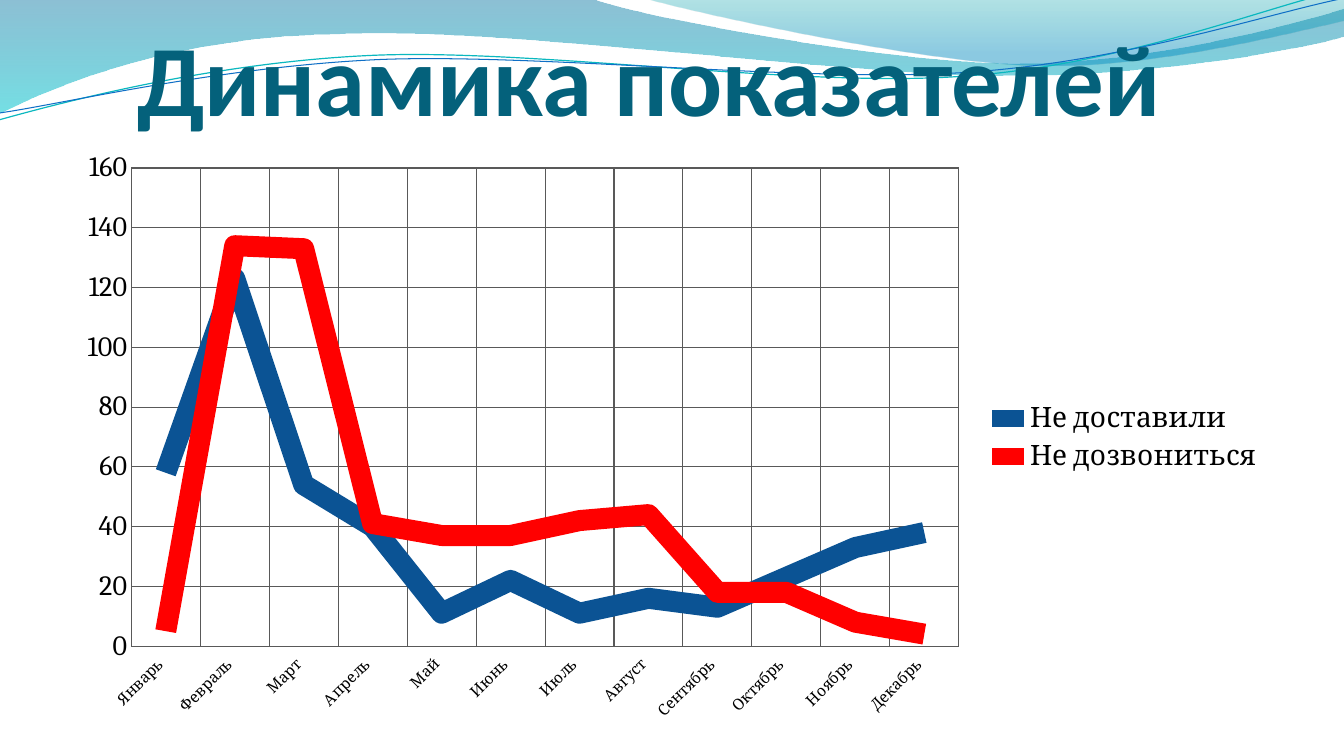
import math

from lxml import etree
from pptx import Presentation
from pptx import util as u
from pptx.chart.data import CategoryChartData
from pptx.dml.color import RGBColor
from pptx.enum import chart as ch, text
from pptx.oxml import ns

TEAL = RGBColor(0x04, 0x61, 0x7B)
BLUE = RGBColor(0x0F, 0x6F, 0xC6)
DARK_BLUE = RGBColor(0x0B, 0x53, 0x94)
CYAN = RGBColor(0x0A, 0xB8, 0xBF)
RED = RGBColor(0xFF, 0x00, 0x00)
BLACK = RGBColor(0x00, 0x00, 0x00)
GRID = RGBColor(0x59, 0x59, 0x59)
WAVE_TOP = RGBColor(0x00, 0x74, 0xA1)
WAVE_BOTTOM = RGBColor(0x00, 0xC6, 0xCF)
CREST_TOP = RGBColor(0x00, 0xA1, 0xA9)
CREST_BOTTOM = RGBColor(0x00, 0x8B, 0xBF)

MONTHS = ["Январь", "Февраль", "Март", "Апрель", "Май", "Июнь",
          "Июль", "Август", "Сентябрь", "Октябрь", "Ноябрь", "Декабрь"]
SERIES = [
    ("Не доставили", [58, 123, 54, 40, 11, 22, 11, 16, 13, 23, 33, 38], DARK_BLUE),
    ("Не дозвониться", [5, 134, 133, 41, 37, 37, 42, 44, 18, 18, 8, 4], RED),
]

WAVE = [(0, 0), (5.87, -0.01),
        (6.34, 0.17, 8.85, 0.63, 10.11, 0.63),
        (11.38, 0.63, 12.78, 0.26, 13.33, 0.09),
        (13.35, 0.36),
        (13.11, 0.44, 11.6, 0.76, 9.94, 0.75),
        (8.29, 0.75, 5.09, 0.28, 3.43, 0.34),
        (1.72, 0.36, 0.61, 0.83, -0.01, 1.13)]
CREST = [(6.39, -0.01),
         (6.79, 0.11, 9.09, 0.62, 10.25, 0.65),
         (11.41, 0.69, 12.82, 0.32, 13.33, 0.21),
         (13.33, 0)]
CYAN_LINE = [(-0.01, 1.19),
             (0.64, 1.01, 2.11, 0.62, 3.69, 0.55),
             (5.27, 0.48, 7.9, 0.87, 9.5, 0.76),
             (11.1, 0.66, 12.52, 0.08, 13.31, -0.1)]
BLUE_LINE = [(0, 1.12),
             (0.63, 1.03, 2.18, 0.66, 3.78, 0.59),
             (5.37, 0.53, 7.96, 0.82, 9.55, 0.72),
             (11.15, 0.62, 12.55, 0.14, 13.34, -0.02)]
TILT = -2.7


def turn(segments, degrees, cx=6.66, cy=0.57):
    cos, sin = math.cos(math.radians(degrees)), math.sin(math.radians(degrees))
    turned = []
    for seg in segments:
        points = []
        for x, y in zip(seg[::2], seg[1::2]):
            dx, dy = x - cx, y - cy
            points += [cx + dx * cos - dy * sin, cy + dx * sin + dy * cos]
        turned.append(tuple(points))
    return turned


def set_font(font, size, name="Cambria", color=BLACK, bold=False):
    font.size = u.Pt(size)
    font.name = name
    font.bold = bold
    font.color.rgb = color


def write(p, words, align=text.PP_ALIGN.LEFT, **fmt):
    p.alignment = align
    r = p.add_run()
    r.text = words
    set_font(r.font, **fmt)


class SlideBuilder:
    heading = {"size": 72, "name": "Calibri", "color": TEAL, "bold": True}

    def __init__(self, prs):
        self.s = prs.slides.add_slide(prs.slide_layouts[5])

    def outline(self, segments, close):
        segments = [[u.Inches(v) for v in seg] for seg in segments]
        ends = [seg[-2:] for seg in segments]
        builder = self.s.shapes.build_freeform(*ends[0])
        builder.add_line_segments(ends[1:], close=close)
        sp = builder.convert_to_shape()
        sp.shadow.inherit = False
        sides = list(sp._element.iter(ns.qn("a:lnTo")))
        for side, seg in zip(sides, segments[1:]):
            if len(seg) == 6:
                self.bend(side, seg, sp.left, sp.top)
        return sp

    def bend(self, side, seg, left, top):
        bezier = etree.Element(ns.qn("a:cubicBezTo"))
        for x, y in zip(seg[::2], seg[1::2]):
            pt = etree.SubElement(bezier, ns.qn("a:pt"))
            pt.set("x", str(x - left))
            pt.set("y", str(y - top))
        side.getparent().replace(side, bezier)

    def wave(self, segments, stops):
        sp = self.outline(segments, True)
        sp.line.fill.background()
        sp.fill.gradient()
        sp.fill.gradient_angle = 270
        for stop, (position, color, _) in zip(sp.fill.gradient_stops, stops):
            stop.position = position
            stop.color.rgb = color
        colors = sp._element.spPr.iter(ns.qn("a:srgbClr"))
        for clr, (_, _, opacity) in zip(colors, stops):
            etree.SubElement(clr, ns.qn("a:alpha")).set("val", str(opacity * 1000))

    def curve(self, segments, color, width):
        sp = self.outline(turn(segments, -TILT), False)
        sp.rotation = TILT
        sp.fill.background()
        sp.line.color.rgb = color
        sp.line.width = u.Pt(width)

    def title(self, words):
        sp = self.s.shapes.title
        sp._element.getparent().append(sp._element)
        sp.left, sp.top = u.Inches(0.67), u.Inches(0.11)
        sp.width, sp.height = u.Inches(12), u.Inches(1.25)
        tf = sp.text_frame
        tf.auto_size = text.MSO_AUTO_SIZE.NONE
        tf.word_wrap = True
        tf.vertical_anchor = text.MSO_ANCHOR.BOTTOM
        tf.margin_left = tf.margin_bottom = 0
        tf.margin_top = u.Inches(0.05)
        tf.margin_right = u.Inches(0.46)
        write(tf.paragraphs[0], words, text.PP_ALIGN.CENTER, **self.heading)

    def axis(self, axis, size):
        axis.has_major_gridlines = True
        for line in (axis.major_gridlines.format.line, axis.format.line):
            line.color.rgb = GRID
            line.width = u.Pt(0.75)
        axis.major_tick_mark = axis.minor_tick_mark = ch.XL_TICK_MARK.NONE
        set_font(axis.tick_labels.font, size)

    def line_chart(self, categories, series):
        data = CategoryChartData()
        data.categories = categories
        for name, values, _ in series:
            data.add_series(name, values)
        chart = self.s.shapes.add_chart(
            ch.XL_CHART_TYPE.LINE, u.Inches(0.63), u.Inches(1.39),
            u.Inches(12), u.Inches(5.9), data).chart
        set_font(chart.font, 18)
        chart.has_title = False
        chart.has_legend = True
        chart.legend.position = ch.XL_LEGEND_POSITION.RIGHT
        chart.legend.include_in_layout = False
        set_font(chart.legend.font, 20)
        self.axis(chart.category_axis, 11)
        self.axis(chart.value_axis, 20)
        chart.value_axis.minimum_scale = 0
        chart.value_axis.maximum_scale = 160
        chart.value_axis.major_unit = 20
        labels = chart.category_axis.tick_labels.font._element.getparent().getparent()
        labels.getparent().find(ns.qn("a:bodyPr")).set("rot", "-2700000")
        chart.plots[0].vary_by_categories = False
        for ser, (_, _, color) in zip(chart.plots[0].series, series):
            ser.smooth = False
            ser.marker.style = ch.XL_MARKER_STYLE.NONE
            ser.format.line.color.rgb = color
            ser.format.line.width = u.Pt(15)
            etree.SubElement(ser.format.line._ln, ns.qn("a:round"))
        self.place_plot(chart, x=0.056, y=0.047, w=0.684, h=0.804)

    def place_plot(self, chart, **box):
        area = chart._chartSpace.chart.plotArea
        for old in area.findall(ns.qn("c:layout")):
            area.remove(old)
        layout = etree.Element(ns.qn("c:layout"))
        manual = etree.SubElement(layout, ns.qn("c:manualLayout"))
        settings = {"layoutTarget": "inner", "xMode": "edge", "yMode": "edge", **box}
        for tag, value in settings.items():
            etree.SubElement(manual, ns.qn("c:" + tag)).set("val", str(value))
        area.insert(0, layout)


def main():
    prs = Presentation()
    prs.slide_width, prs.slide_height = u.Inches(13.33), u.Inches(7.5)
    slide = SlideBuilder(prs)
    slide.wave(WAVE, [(0, WAVE_TOP, 45), (1, WAVE_BOTTOM, 55)])
    slide.wave(CREST, [(0, CREST_TOP, 30), (0.8, CREST_BOTTOM, 45)])
    slide.curve(CYAN_LINE, CYAN, 0.85)
    slide.curve(BLUE_LINE, BLUE, 0.75)
    slide.title("Динамика показателей")
    slide.line_chart([f" {month}  " for month in MONTHS], SERIES)
    prs.save("out.pptx")


if __name__ == "__main__":
    main()
